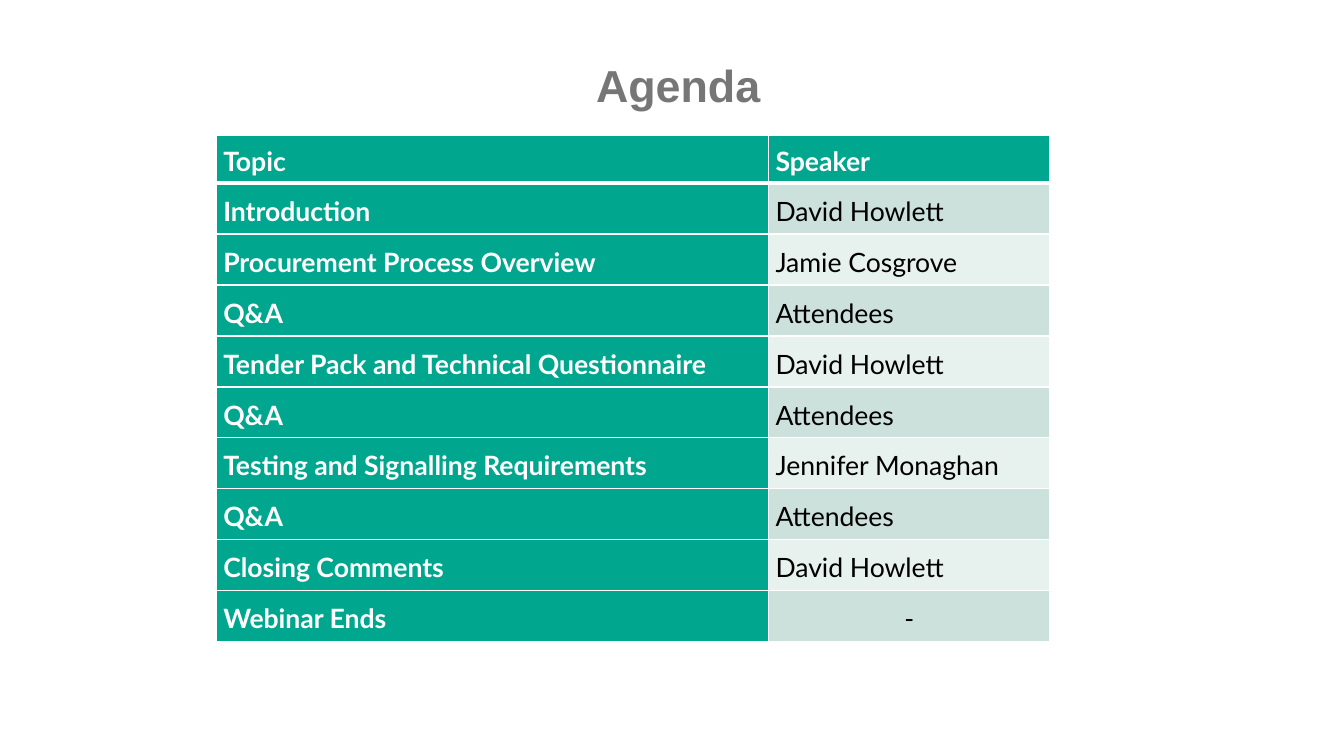
from dataclasses import dataclass

from lxml import etree
from pptx import Presentation
from pptx.dml.color import RGBColor
from pptx.enum.text import MSO_ANCHOR, MSO_AUTO_SIZE, PP_ALIGN
from pptx.oxml.ns import qn
from pptx.util import Pt

MIDDLE = MSO_ANCHOR.MIDDLE
GROW = MSO_AUTO_SIZE.SHAPE_TO_FIT_TEXT
LEFT, CENTER = PP_ALIGN.LEFT, PP_ALIGN.CENTER
TITLE_ONLY = 5


@dataclass(frozen=True)
class Theme:
    head_font: str = "Arial"
    body_font: str = "Lato"
    head_size: int = 32
    body_size: int = 19
    gray: str = "767676"
    teal: str = "00A78E"
    mint: str = "CCE1DB"
    pale: str = "E7F1EE"
    white: str = "FFFFFF"
    black: str = "000000"


THEME = Theme()

AGENDA = [
    ("Topic", "Speaker"),
    ("Introduction", "David Howlett"),
    ("Procurement Process Overview", "Jamie Cosgrove"),
    ("Q&A", "Attendees"),
    ("Tender Pack and Technical Questionnaire", "David Howlett"),
    ("Q&A", "Attendees"),
    ("Testing and Signalling Requirements", "Jennifer Monaghan"),
    ("Q&A", "Attendees"),
    ("Closing Comments", "David Howlett"),
    ("Webinar Ends", "-"),
]
WIDTHS = (394.5, 201)
HEAD_ROW, BODY_ROW = 34, 36.4


def style(para, name, size, color, bold, align):
    para.alignment = align
    for run in para.runs:
        font = run.font
        font.name, font.size, font.bold = name, Pt(size), bold
        font.color.rgb = RGBColor.from_string(color)


def add_title(slide, text):
    title = slide.shapes.title
    title.left, title.top = Pt(137.5), Pt(37.5)
    title.width, title.height = Pt(694), Pt(46)
    frame = title.text_frame
    frame.text = text
    frame.word_wrap = True
    frame.auto_size = GROW
    frame.vertical_anchor = MIDDLE
    style(frame.paragraphs[0], THEME.head_font, THEME.head_size,
          THEME.gray, True, CENTER)


def set_edge(cell, side, width):
    props = cell._tc.get_or_add_tcPr()
    line = etree.SubElement(props, qn(f"a:ln{side}"), w=str(Pt(width)))
    fill = etree.SubElement(line, qn("a:solidFill"))
    etree.SubElement(fill, qn("a:srgbClr"), val=THEME.white)


def fill_cell(cell, text, row, col):
    header = row == 0
    strong = header or col == 0

    # Borders: the rule under the header is thicker
    for side in "LRTB":
        thick = (side == "B" and header) or (side == "T" and row == 1)
        set_edge(cell, side, 3 if thick else 1)

    # Fill: solid header and topics, banded speakers
    band = THEME.mint if row % 2 else THEME.pale
    cell.fill.solid()
    cell.fill.fore_color.rgb = RGBColor.from_string(
        THEME.teal if strong else band)

    # Text
    cell.vertical_anchor = MIDDLE
    cell.margin_left = cell.margin_right = Pt(5)
    cell.margin_top = cell.margin_bottom = Pt(0)
    cell.text_frame.text = text
    para = cell.text_frame.paragraphs[0]
    para.line_spacing = 1.15
    para.space_after = Pt(10 if header else 0)
    style(para, THEME.body_font, THEME.body_size,
          THEME.white if strong else THEME.black, strong,
          CENTER if text == "-" else LEFT)


def add_agenda(slide, rows):
    height = HEAD_ROW + BODY_ROW * (len(rows) - 1)
    frame = slide.shapes.add_table(
        len(rows), len(WIDTHS), Pt(154.5), Pt(96.8),
        Pt(sum(WIDTHS)), Pt(height))
    table = frame.table
    for col, width in enumerate(WIDTHS):
        table.columns[col].width = Pt(width)
    for row, texts in enumerate(rows):
        table.rows[row].height = Pt(BODY_ROW if row else HEAD_ROW)
        for col, text in enumerate(texts):
            fill_cell(table.cell(row, col), text, row, col)


def main():
    deck = Presentation()
    deck.slide_width, deck.slide_height = Pt(960), Pt(540)
    slide = deck.slides.add_slide(deck.slide_layouts[TITLE_ONLY])
    add_title(slide, "Agenda")
    add_agenda(slide, AGENDA)
    deck.save("out.pptx")


if __name__ == "__main__":
    main()
